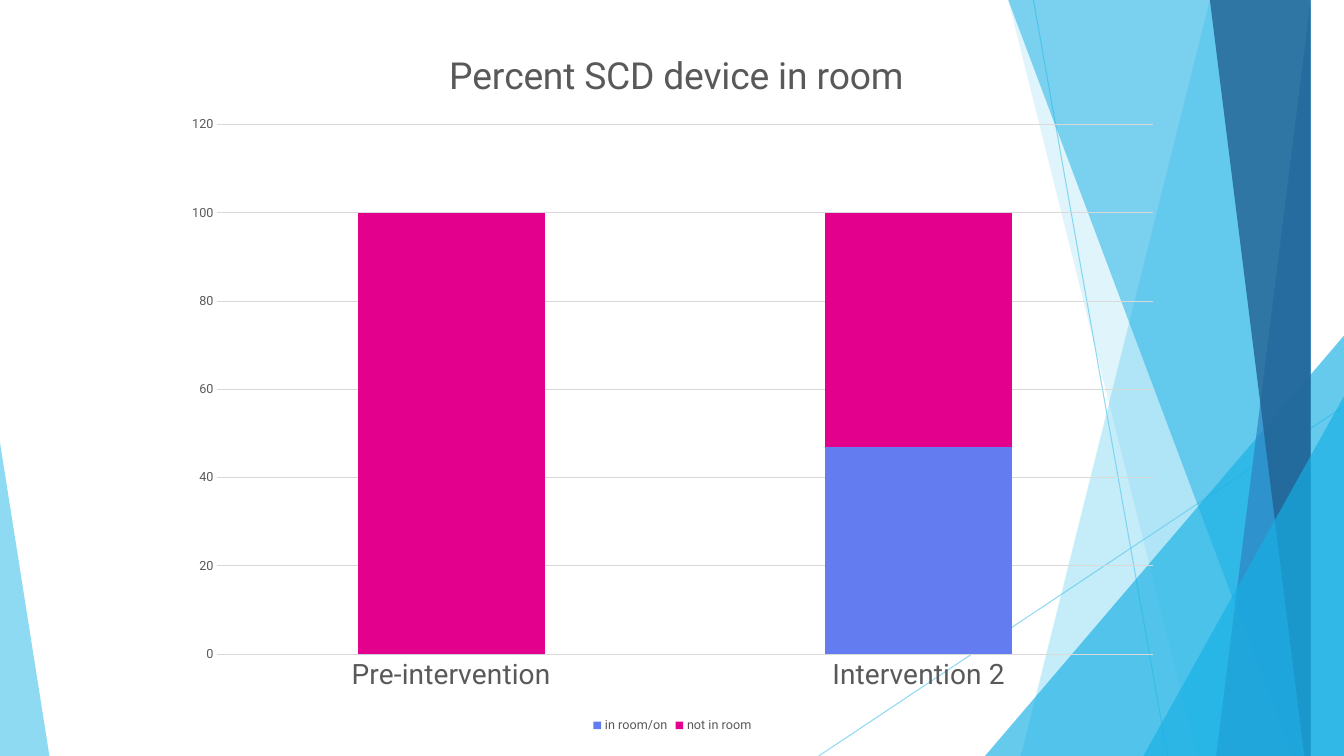
from lxml import etree
from pptx import Presentation
from pptx import util as u
from pptx.chart.data import CategoryChartData
from pptx.dml.color import RGBColor
from pptx.enum import chart as charts, shapes
from pptx.oxml import parse_xml
from pptx.oxml.ns import nsdecls, qn

# Content
TITLE = "Percent SCD device in room"
CATEGORIES = ["Pre-intervention", "Intervention 2"]
SERIES = [("in room/on", [0, 47], "637CEF"), ("not in room", [100, 53], "E3008C")]
FONT, GREY, RULE = "Roboto", "595959", "D9D9D9"

# Page and backdrop, in inches
WIDTH, HEIGHT, TOP = 13.33, 7.5, -0.01
SKY, CYAN, BLUE, NAVY = "5FCBEF", "17B0E4", "2E83C3", "226292"
LINES = [((10.25, 0), (11.58, HEIGHT)), ((WIDTH, 4.03), (8.12, HEIGHT))]
# Bands reach the right edge: top-left x, bottom-left x, colour, opacity
# Triangles stand on the bottom edge: left, width, height, peak, colour, opacity
BACKDROP = [
    ("band", 12.28, 10.04, SKY, 36),
    ("band", 10.5, 11.83, SKY, 20),
    ("triangle", 9.77, 3.56, 4.17, 1, CYAN, 66),
    ("band", 10.21, 12.91, CYAN, 50),
    ("band", 13.03, 11.92, BLUE, 70),
    ("band", 11.96, 13.18, NAVY, 80),
    ("triangle", 11.34, 1.99, 3.57, 1, CYAN, 66),
    ("triangle", 0, 0.49, 3.11, 0, SKY, 70),
]
CHART_BOX = (1.71, 0.19, 9.92, 7.12)
# Shares of the chart's size
PLOT_AREA = {"x": 0.045, "y": 0.147, "w": 0.935, "h": 0.738}
TITLE_PLACE = {"x": 0.27, "y": 0.035}


def color(value):
    return RGBColor.from_string(value)


def set_opacity(shape, percent):
    for tint in shape._element.spPr.iter(qn("a:srgbClr")):
        etree.SubElement(tint, qn("a:alpha")).set("val", str(percent * 1000))


def paint(shape, fill, opacity):
    shape.shadow.inherit = False
    shape.fill.solid()
    shape.fill.fore_color.rgb = color(fill)
    shape.line.fill.background()
    set_opacity(shape, opacity)


def add_line(page, start, end):
    ends = [u.Inches(value) for value in start + end]
    line = page.shapes.add_connector(shapes.MSO_CONNECTOR.STRAIGHT, *ends)
    line.line.color.rgb = color(SKY)
    line.line.width = u.Pt(0.75)
    set_opacity(line, 70)
    etree.SubElement(line._element.spPr, qn("a:effectLst"))


def add_band(page, top_x, bottom_x, fill, opacity):
    outline = page.shapes.build_freeform(top_x, TOP, scale=u.Inches(1))
    outline.add_line_segments([(WIDTH, TOP), (WIDTH, HEIGHT), (bottom_x, HEIGHT)])
    paint(outline.convert_to_shape(), fill, opacity)


def add_triangle(page, left, width, height, peak, fill, opacity):
    box = [u.Inches(value) for value in (left, HEIGHT - height, width, height)]
    triangle = page.shapes.add_shape(shapes.MSO_SHAPE.ISOSCELES_TRIANGLE, *box)
    triangle.adjustments[0] = peak
    paint(triangle, fill, opacity)


def style_font(font, size, value=GREY):
    font.name = FONT
    font.size = u.Pt(size)
    font.bold = False
    font.color.rgb = color(value)


def style_rule(line):
    line.color.rgb = color(RULE)
    line.width = u.Pt(0.75)


def layout_xml(place, inner=False):
    target = '<c:layoutTarget val="inner"/>' if inner else ""
    modes = "".join(f'<c:{key}Mode val="edge"/>' for key in "xy")
    sizes = "".join(f'<c:{key} val="{share}"/>' for key, share in place.items())
    return parse_xml(f'<c:layout {nsdecls("c")}><c:manualLayout>{target}{modes}{sizes}'
                     "</c:manualLayout></c:layout>")


def place_part(part, layout, before):
    for old in part.findall(qn("c:layout")):
        part.remove(old)
    part.insert(before, layout)


def add_room_chart(page):
    data = CategoryChartData()
    data.categories = CATEGORIES
    for name, values, _ in SERIES:
        data.add_series(name, values)
    box = [u.Inches(value) for value in CHART_BOX]
    chart = page.shapes.add_chart(charts.XL_CHART_TYPE.COLUMN_STACKED, *box, data).chart
    style_font(chart.font, 10, "000000")

    # Title
    chart.has_title = True
    frame = chart.chart_title.text_frame
    frame.text = TITLE
    style_font(frame.paragraphs[0].runs[0].font, 26.6)
    chart.chart_title.include_in_layout = False
    place_part(chart.chart_title._element, layout_xml(TITLE_PLACE), 1)

    # Columns
    plot = chart.plots[0]
    plot.gap_width, plot.overlap = 150, 100
    plot.vary_by_categories = False
    for series, (_, _, fill) in zip(plot.series, SERIES):
        series.format.fill.solid()
        series.format.fill.fore_color.rgb = color(fill)
    place_part(chart._chartSpace.chart.plotArea, layout_xml(PLOT_AREA, True), 0)

    # Axes
    for axis, size in ((chart.category_axis, 20), (chart.value_axis, 9)):
        axis.major_tick_mark = axis.minor_tick_mark = charts.XL_TICK_MARK.NONE
        style_font(axis.tick_labels.font, size)
    style_rule(chart.category_axis.format.line)
    scale = chart.value_axis
    scale.minimum_scale, scale.maximum_scale, scale.major_unit = 0, 120, 20
    scale.format.line.fill.background()
    scale.has_major_gridlines = True
    style_rule(scale.major_gridlines.format.line)

    # Legend
    chart.has_legend = True
    chart.legend.position = charts.XL_LEGEND_POSITION.BOTTOM
    chart.legend.include_in_layout = False
    style_font(chart.legend.font, 9)


def main():
    deck = Presentation()
    deck.slide_width, deck.slide_height = u.Inches(WIDTH), u.Inches(HEIGHT)
    page = deck.slides.add_slide(deck.slide_layouts[6])
    for start, end in LINES:
        add_line(page, start, end)
    builders = {"band": add_band, "triangle": add_triangle}
    for kind, *details in BACKDROP:
        builders[kind](page, *details)
    add_room_chart(page)
    deck.save("out.pptx")


if __name__ == "__main__":
    main()
